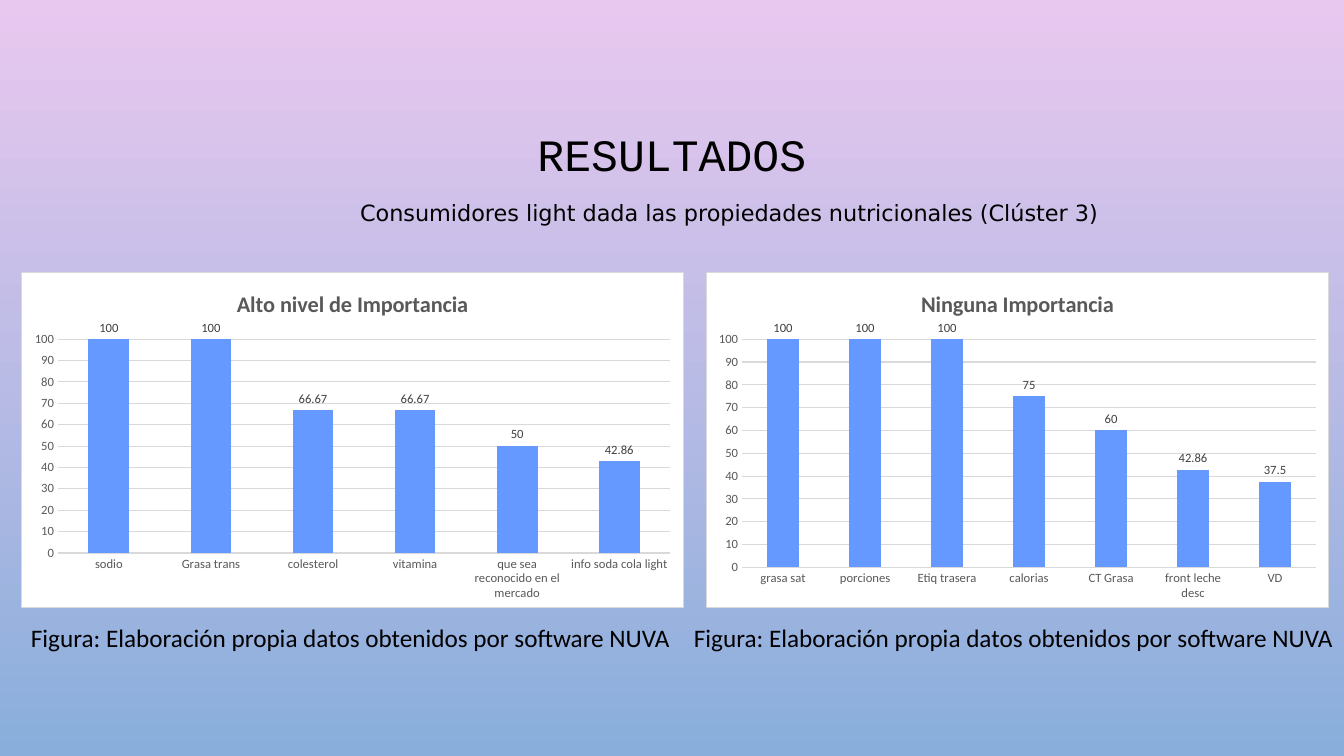
from lxml import etree
from pptx import Presentation
from pptx.chart.data import CategoryChartData
from pptx.dml.color import RGBColor
from pptx.enum.chart import XL_CHART_TYPE, XL_LABEL_POSITION, XL_TICK_MARK
from pptx.enum.text import MSO_ANCHOR, PP_ALIGN
from pptx.oxml import parse_xml
from pptx.util import Pt

COLUMNS = XL_CHART_TYPE.COLUMN_CLUSTERED
LABEL_ABOVE = XL_LABEL_POSITION.OUTSIDE_END
NO_TICK = XL_TICK_MARK.NONE
MIDDLE = MSO_ANCHOR.MIDDLE
LEFT, CENTER = PP_ALIGN.LEFT, PP_ALIGN.CENTER

SLIDE_W, SLIDE_H = 1344, 756
EMU_PER_PX = 12192000 / SLIDE_W
COLORS = {
    "sky_top": "E9C8EF", "sky_bottom": "89AEDB", "text": "000000",
    "axis_text": "595959", "label_text": "404040", "grid": "D9D9D9",
    "bar": "6699FF", "panel": "FFFFFF",
}
NS_A = "http://schemas.openxmlformats.org/drawingml/2006/main"
NS_C = "http://schemas.openxmlformats.org/drawingml/2006/chart"

SUBTITLE = "Consumidores light dada las propiedades nutricionales (Clúster 3)"
CAPTION = "Figura: Elaboración propia datos obtenidos por software NUVA"
HIGH_IMPORTANCE = {
    "sodio": 100, "Grasa trans": 100, "colesterol": 66.67, "vitamina": 66.67,
    "que sea reconocido en el mercado": 50, "info soda cola light": 42.86,
}
NO_IMPORTANCE = {
    "grasa sat": 100, "porciones": 100, "Etiq trasera": 100, "calorias": 75,
    "CT Grasa": 60, "front leche desc": 42.86, "VD": 37.5,
}


def px(length):
    return round(length * EMU_PER_PX)


def rgb(name):
    return RGBColor.from_string(COLORS[name])


def style_font(font, size, color, face="Calibri", bold=False):
    font.size = Pt(size)
    font.name = face
    font.bold = bold
    font.color.rgb = rgb(color)


def paint_background(slide):
    fill = slide.background.fill
    fill.gradient()
    fill.gradient_angle = 270
    for stop, name in zip(fill.gradient_stops, ("sky_top", "sky_bottom")):
        stop.color.rgb = rgb(name)


def add_heading(slide, box):
    heading = slide.shapes.title
    heading.left, heading.top, heading.width, heading.height = map(px, box)
    heading.text_frame.text = "RESULTADOS"
    heading.text_frame.vertical_anchor = MIDDLE
    paragraph = heading.text_frame.paragraphs[0]
    paragraph.alignment = CENTER
    paragraph.line_spacing = 0.9
    style_font(paragraph.runs[0].font, 32, "text", "Courier New")


def add_line_of_text(slide, box, words, size, face, alignment, indent=0):
    frame = slide.shapes.add_textbox(*map(px, box)).text_frame
    frame.word_wrap = True
    frame.text = words
    paragraph = frame.paragraphs[0]
    paragraph.alignment = alignment
    if indent:
        properties = paragraph._p.get_or_add_pPr()
        properties.set("marL", "0")
        properties.set("indent", str(px(indent)))
    style_font(paragraph.runs[0].font, size, "text", face)


def frame_chart(chart):
    panel = parse_xml(
        f'<c:spPr xmlns:c="{NS_C}" xmlns:a="{NS_A}">'
        f'<a:solidFill><a:srgbClr val="{COLORS["panel"]}"/></a:solidFill>'
        f'<a:ln w="{Pt(0.75)}"><a:solidFill><a:srgbClr val="{COLORS["grid"]}"/>'
        '</a:solidFill></a:ln></c:spPr>')
    chart._chartSpace.find(etree.QName(NS_C, "chart").text).addnext(panel)


def style_axes(chart):
    for axis in (chart.category_axis, chart.value_axis):
        axis.major_tick_mark = axis.minor_tick_mark = NO_TICK
        style_font(axis.tick_labels.font, 9, "axis_text")
    category_line = chart.category_axis.format.line
    category_line.color.rgb = rgb("grid")
    category_line.width = Pt(1)
    scale = chart.value_axis
    scale.minimum_scale, scale.maximum_scale, scale.major_unit = 0, 100, 10
    scale.format.line.fill.background()
    scale.has_major_gridlines = True
    grid = scale.major_gridlines.format.line
    grid.color.rgb = rgb("grid")
    grid.width = Pt(0.75)


def add_importance_chart(slide, box, heading, scores):
    data = CategoryChartData()
    data.categories = list(scores)
    data.add_series("Series 1", list(scores.values()))
    chart = slide.shapes.add_chart(COLUMNS, *map(px, box), data).chart
    style_font(chart.font, 10, "text")
    frame_chart(chart)
    chart.has_legend = False
    chart.has_title = True
    chart.chart_title.include_in_layout = False
    title_frame = chart.chart_title.text_frame
    title_frame.text = heading
    style_font(title_frame.paragraphs[0].runs[0].font, 16, "axis_text", bold=True)
    style_axes(chart)
    plot = chart.plots[0]
    plot.gap_width = 150
    plot.vary_by_categories = False
    bars = plot.series[0]
    bars.format.fill.solid()
    bars.format.fill.fore_color.rgb = rgb("bar")
    labels = bars.data_labels
    labels.show_value = True
    labels.position = LABEL_ABOVE
    style_font(labels.font, 9, "label_text")


def build_results_slide(prs):
    slide = prs.slides.add_slide(prs.slide_layouts[5])
    paint_background(slide)
    add_heading(slide, (101, 69, 1142, 176))
    add_line_of_text(slide, (241, 194, 928, 37), SUBTITLE, 16,
                     "DejaVu Sans", CENTER, indent=49)
    panels = (
        (21, 663, 21, "Alto nivel de Importancia", HIGH_IMPORTANCE),
        (706, 623, 684, "Ninguna Importancia", NO_IMPORTANCE),
    )
    for left, width, caption_left, heading, scores in panels:
        add_importance_chart(slide, (left, 272, width, 336), heading, scores)
        add_line_of_text(slide, (caption_left, 617, 660, 40), CAPTION, 18,
                         "Calibri", LEFT)


def main():
    prs = Presentation()
    prs.slide_width, prs.slide_height = px(SLIDE_W), px(SLIDE_H)
    build_results_slide(prs)
    prs.save("out.pptx")


if __name__ == "__main__":
    main()
